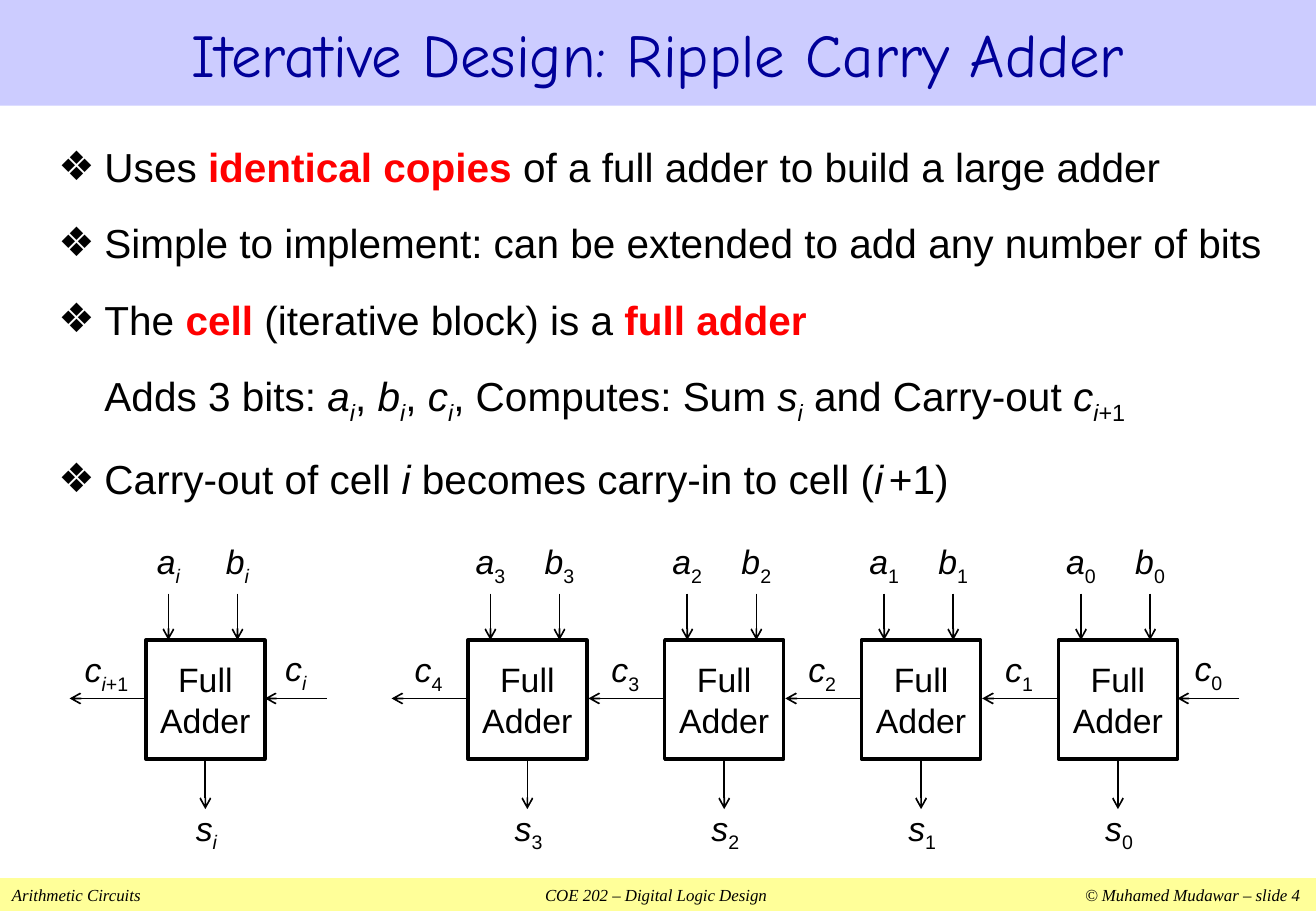
from lxml import etree
from pptx import Presentation
from pptx import util as u
from pptx.dml import color
from pptx.enum import shapes, text
from pptx.oxml import ns

WIDTH, HEIGHT = 10.83, 7.5
CELL = 0.98      # side of a full adder
PITCH = 1.62     # distance between neighbouring adders
LABEL = 0.5      # side of a signal label
BLACK = "000000"

# Run styles: r = red bold, i = italic, s = subscript, g = narrow gap
BULLETS = [
    (True, [("Uses ", ""), ("identical copies ", "r"),
            ("of a full adder to build a large adder", "")]),
    (True, [("Simple to implement: can be extended to add any number of bits", "")]),
    (True, [("The ", ""), ("cell", "r"), (" (iterative block) is a ", ""),
            ("full adder", "r")]),
    (False, [("Adds 3 bits: ", ""), ("a", "i"), ("i", "is"), (", ", ""),
             ("b", "i"), ("i", "is"), (", ", ""), ("c", "i"), ("i", "is"),
             (", Computes: Sum ", ""), ("s", "i"), ("i", "is"),
             (" and Carry-out ", ""), ("c", "i"), ("i", "is"), ("+1", "s")]),
    (True, [("Carry-out of cell ", ""), ("i", "i"),
            (" becomes carry-in to cell (", ""), ("i", "i"), (" ", "ig"), ("+1)", "")]),
]


def rgb(hex_string):
    return color.RGBColor.from_string(hex_string)


def style_run(run, size, font="Arial", ink=BLACK, style=""):
    run.font.name = font
    run.font.size = u.Pt(12 if "g" in style else size)
    run.font.color.rgb = rgb("FF0000" if "r" in style else ink)
    run.font.bold = "r" in style
    run.font.italic = "i" in style
    if "s" in style:
        run.font._element.set("baseline", "-25000")


def write_runs(paragraph, runs, size):
    for words, style in runs:
        run = paragraph.add_run()
        run.text = words
        style_run(run, size, style=style)


def add_xml(parent, tag, **attributes):
    return etree.SubElement(parent, ns.qn(tag), attributes)


def place(shape, left, top, width, height):
    shape.left, shape.top = u.Inches(left), u.Inches(top)
    shape.width, shape.height = u.Inches(width), u.Inches(height)


def centre_frame(frame):
    """Middle-anchored, unwrapped text without margins."""
    frame.margin_left = frame.margin_right = frame.margin_top = frame.margin_bottom = 0
    frame.word_wrap = False
    frame.vertical_anchor = text.MSO_ANCHOR.MIDDLE
    for paragraph in frame.paragraphs:
        paragraph.alignment = text.PP_ALIGN.CENTER


def add_title(slide, left, top, width, height):
    title = slide.shapes.title
    place(title, left, top, width, height)
    title.fill.solid()
    title.fill.fore_color.rgb = rgb("CCCCFF")
    title.text_frame.text = "Iterative Design: Ripple Carry Adder"
    title.text_frame.vertical_anchor = text.MSO_ANCHOR.MIDDLE
    heading = title.text_frame.paragraphs[0]
    heading.alignment = text.PP_ALIGN.CENTER
    style_run(heading.runs[0], 36, "Comic Neue", "000099")


def add_bullets(slide, left, top, width, height):
    body = slide.placeholders[1]
    place(body, left, top, width, height)
    frame = body.text_frame
    frame.auto_size = text.MSO_AUTO_SIZE.NONE
    for number, (bulleted, runs) in enumerate(BULLETS):
        point = frame.paragraphs[0] if number == 0 else frame.add_paragraph()
        point.space_before = u.Pt(15)
        point.line_spacing = 1.05
        props = point._p.get_or_add_pPr()
        props.set("marL", str(u.Inches(0.38)))
        props.set("indent", str(u.Inches(-0.38 if bulleted else 0)))
        if bulleted:
            add_xml(props, "a:buFont", typeface="Arial")
            add_xml(props, "a:buChar", char="❖")
        else:
            add_xml(props, "a:buNone")
        write_runs(point, runs, 24)


def add_footer(slide, left, top, width, height):
    footer = slide.shapes.add_shape(shapes.MSO_SHAPE.RECTANGLE, 0, 0, 0, 0)
    place(footer, left, top, width, height)
    footer.shadow.inherit = False
    footer.fill.solid()
    footer.fill.fore_color.rgb = rgb("FFFF99")
    footer.line.fill.background()
    frame = footer.text_frame
    frame.margin_top = frame.margin_bottom = 0
    frame.vertical_anchor = text.MSO_ANCHOR.MIDDLE
    line = frame.paragraphs[0]
    line.text = "Arithmetic Circuits\tCOE 202 – Digital Logic Design\t© Muhamed Mudawar – slide 4"
    line.alignment = text.PP_ALIGN.LEFT
    tabs = add_xml(line._p.get_or_add_pPr(), "a:tabLst")
    for position, align in ((5.3, "ctr"), (10.6, "r")):
        add_xml(tabs, "a:tab", pos=str(u.Inches(position)), algn=align)
    for run in line.runs:
        style_run(run, 10, "Times New Roman", style="i")


def add_adder(group, left, top, index, carry_out, carry_in=None):
    """One full adder; points are counted in cell sides from its corner."""
    def at(x, y):
        return u.Inches(left + x * CELL), u.Inches(top + y * CELL)

    def arrow(start, end):
        wire = group.shapes.add_connector(
            shapes.MSO_CONNECTOR.STRAIGHT, *at(*start), *at(*end))
        wire.line.color.rgb = rgb(BLACK)
        wire.line.width = u.Pt(1)
        add_xml(wire.line._get_or_add_ln(), "a:tailEnd", type="arrow")
        add_xml(wire._element.spPr, "a:effectLst")

    def label(x, y, letter, subscripts):
        side = u.Inches(LABEL)
        centre_x, centre_y = at(x, y)
        box = group.shapes.add_textbox(
            centre_x - side // 2, centre_y - side // 2, side, side)
        write_runs(box.text_frame.paragraphs[0], [(letter, "i")] + subscripts, 20)
        centre_frame(box.text_frame)

    # Block
    block = group.shapes.add_shape(
        shapes.MSO_SHAPE.RECTANGLE, *at(0, 0), u.Inches(CELL), u.Inches(CELL))
    block.shadow.inherit = False
    block.fill.background()
    block.line.color.rgb = rgb(BLACK)
    block.line.width = u.Pt(2)
    block.text_frame.text = "Full\nAdder"
    centre_frame(block.text_frame)
    for paragraph in block.text_frame.paragraphs:
        style_run(paragraph.runs[0], 20)

    # Inputs and sum
    for letter, x in (("a", 0.19), ("b", 0.77)):
        arrow((x, -0.39), (x, 0))
        label(x, -0.64, letter, index)
    arrow((0.5, 1), (0.5, 1.42))
    label(0.51, 1.6, "s", index)

    # Carries
    arrow((0, 0.49), (-0.64, 0.49))
    label(-0.33, 0.27, "c", carry_out)
    if carry_in:
        arrow((1.52, 0.49), (1, 0.49))
        label(1.26, 0.26, "c", carry_in)


def add_single_cell(slide, left, top):
    cell_i = [("i", "is")]
    add_adder(slide.shapes.add_group_shape(), left, top,
              cell_i, cell_i + [("+1", "s")], cell_i)


def add_ripple_chain(slide, left, top, bits):
    chain = slide.shapes.add_group_shape()
    for column in range(bits):
        bit = bits - 1 - column
        index = [(str(bit), "s")]
        add_adder(chain, left + column * PITCH, top, index,
                  [(str(bit + 1), "s")], index if bit == 0 else None)


def main():
    deck = Presentation()
    deck.slide_width, deck.slide_height = u.Inches(WIDTH), u.Inches(HEIGHT)
    slide = deck.slides.add_slide(deck.slide_layouts[1])
    footer_height = 0.27
    add_footer(slide, 0, HEIGHT - footer_height, WIDTH, footer_height)
    add_title(slide, 0, 0, WIDTH, 0.87)
    add_bullets(slide, 0.38, 1.1, 10.27, 3.15)
    add_ripple_chain(slide, 3.85, 5.27, bits=4)
    add_single_cell(slide, 1.2, 5.27)
    deck.save("out.pptx")


if __name__ == "__main__":
    main()
